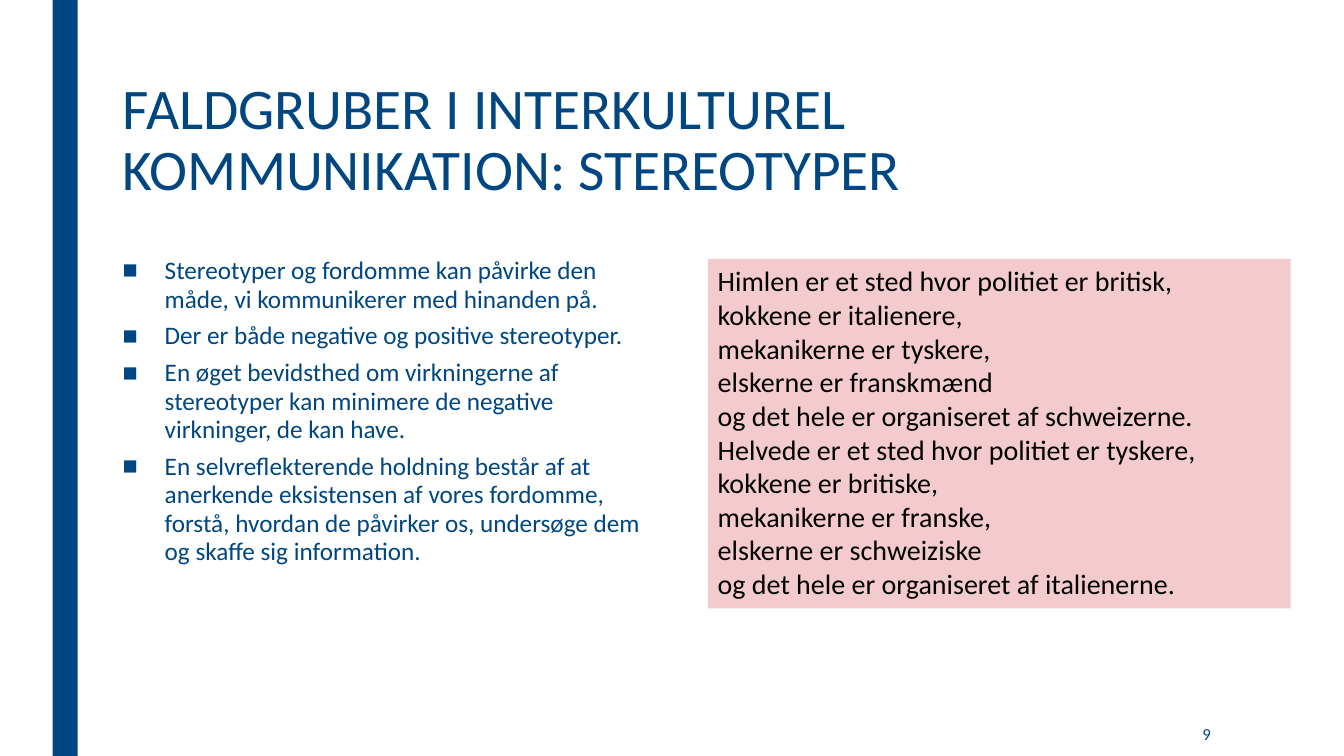
from dataclasses import dataclass

from lxml.etree import SubElement
from pptx import Presentation
from pptx.dml.color import RGBColor
from pptx.enum.shapes import MSO_SHAPE
from pptx.enum.text import MSO_ANCHOR, MSO_AUTO_SIZE, PP_ALIGN
from pptx.oxml.ns import qn
from pptx.util import Pt


@dataclass(frozen=True)
class Theme:
    font: str = "Calibri"
    navy: RGBColor = RGBColor(0x00, 0x46, 0x80)
    pink: RGBColor = RGBColor(0xF3, 0xCB, 0xCF)
    black: RGBColor = RGBColor(0, 0, 0)
    title: int = 41
    verse: int = 20
    body: int = 18
    number: int = 12


theme = Theme()


def add_run(p, text, size, color):
    r = p.add_run()
    r.text = text
    r.font.name = theme.font
    r.font.size = Pt(size)
    r.font.color.rgb = color


def add_panel(left, top, width, height, color):
    """Add a plain filled rectangle without outline or shadow."""
    sp = s.shapes.add_shape(MSO_SHAPE.RECTANGLE, Pt(left), Pt(top), Pt(width), Pt(height))
    sp.fill.solid()
    sp.fill.fore_color.rgb = color
    sp.line.fill.background()
    sp.shadow.inherit = False
    return sp


prs = Presentation()
prs.slide_width, prs.slide_height = Pt(960), Pt(540)
s = prs.slides.add_slide(prs.slide_layouts[5])

# Title
title = s.shapes.title
title.left, title.top, title.width, title.height = Pt(80.6), Pt(54), Pt(826), Pt(116.6)
tf = title.text_frame
tf.word_wrap = True
tf.auto_size = MSO_AUTO_SIZE.NONE
tf.vertical_anchor = MSO_ANCHOR.TOP
p = tf.paragraphs[0]
p.alignment = PP_ALIGN.LEFT
p.line_spacing = 0.89
add_run(p, "FALDGRUBER I INTERKULTUREL KOMMUNIKATION: STEREOTYPER", theme.title, theme.navy)

# Side bar
add_panel(37.5, 0, 18, 540, theme.navy)

# Bullet list
bullets = [
    "Stereotyper og fordomme kan påvirke den måde, vi kommunikerer med hinanden på.",
    "Der er både negative og positive stereotyper.",
    "En øget bevidsthed om virkningerne af stereotyper kan minimere de negative "
    "virkninger, de kan have.",
    "En selvreflekterende holdning består af at anerkende eksistensen af vores fordomme, "
    "forstå, hvordan de påvirker os, undersøge dem og skaffe sig information.",
]
tf = s.shapes.add_textbox(Pt(80.6), Pt(180), Pt(399.6), Pt(282)).text_frame
tf.word_wrap = True
for i, text in enumerate(bullets):
    p = tf.add_paragraph() if i else tf.paragraphs[0]
    p.line_spacing = 0.94
    p.space_after = Pt(6)
    pPr = p._p.get_or_add_pPr()
    pPr.set("marL", str(Pt(30)))
    pPr.set("indent", str(-Pt(30)))
    SubElement(pPr, qn("a:buFont"), typeface="Arial")
    SubElement(pPr, qn("a:buChar"), char="■")
    add_run(p, text, theme.body, theme.navy)

# Slide number
tf = s.shapes.add_textbox(Pt(746), Pt(508.5), Pt(126), Pt(31.5)).text_frame
tf.word_wrap = True
tf.vertical_anchor = MSO_ANCHOR.MIDDLE
p = tf.paragraphs[0]
p.alignment = PP_ALIGN.RIGHT
p.space_after = Pt(6)
add_run(p, "9", theme.number, theme.navy)

# Heaven and hell verse
verse = [
    "Himlen er et sted hvor politiet er britisk,",
    "kokkene er italienere,",
    "mekanikerne er tyskere,",
    "elskerne er franskmænd",
    "og det hele er organiseret af schweizerne.",
    "Helvede er et sted hvor politiet er tyskere, kokkene er britiske,",
    "mekanikerne er franske,",
    "elskerne er schweiziske",
    "og det hele er organiseret af italienerne.",
]
tf = add_panel(505.6, 185, 416.4, 249.6, theme.pink).text_frame
tf.word_wrap = True
tf.auto_size = MSO_AUTO_SIZE.SHAPE_TO_FIT_TEXT
tf.vertical_anchor = MSO_ANCHOR.TOP
p = tf.paragraphs[0]
p.alignment = PP_ALIGN.LEFT
for i, line in enumerate(verse):
    if i:
        p.add_line_break()
    add_run(p, line, theme.verse, theme.black)

prs.save("out.pptx")
